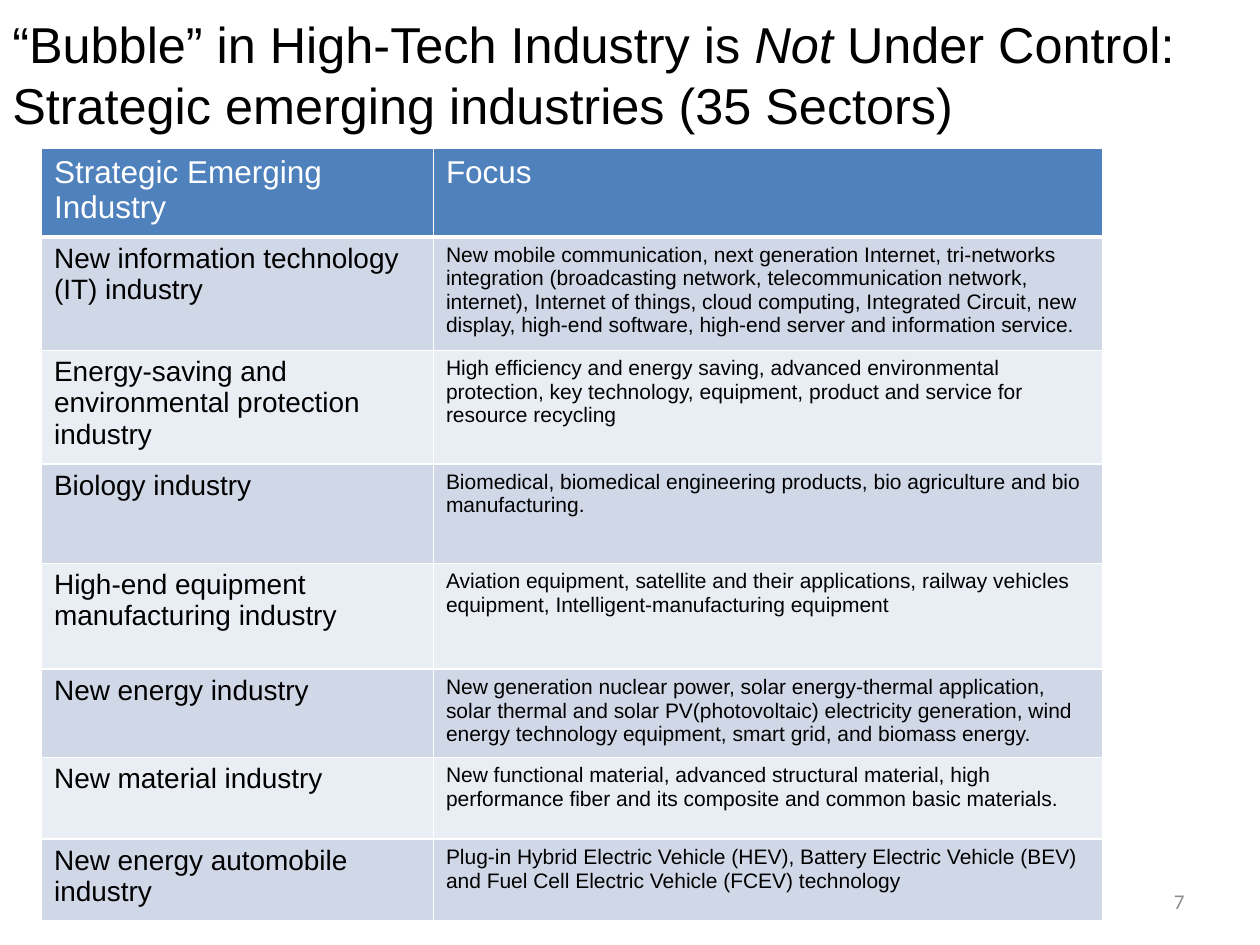
from lxml import etree
from pptx import Presentation
from pptx.dml.color import RGBColor
from pptx.enum import text
from pptx.oxml import ns
from pptx.util import Inches, Pt

HEADER = ("Strategic Emerging Industry", "Focus")
INDUSTRIES = [
    ("New information technology (IT) industry",
     "New mobile communication, next generation Internet, tri-networks integration "
     "(broadcasting network, telecommunication network, internet), Internet of things, "
     "cloud computing, Integrated Circuit, new display, high-end software, "
     "high-end server and information service."),
    ("Energy-saving and environmental protection industry",
     "High efficiency and energy saving, advanced environmental protection, "
     "key technology, equipment, product and service for resource recycling"),
    ("Biology industry",
     "Biomedical, biomedical engineering products, bio agriculture and bio manufacturing."),
    ("High-end equipment manufacturing industry",
     "Aviation equipment, satellite and their applications, railway vehicles equipment, "
     "Intelligent-manufacturing equipment"),
    ("New energy industry",
     "New generation nuclear power, solar energy-thermal application, solar thermal and "
     "solar PV(photovoltaic) electricity generation, wind energy technology equipment, "
     "smart grid, and biomass energy."),
    ("New material industry",
     "New functional material, advanced structural material, high performance fiber "
     "and its composite and common basic materials."),
    ("New energy automobile industry",
     "Plug-in Hybrid Electric Vehicle (HEV), Battery Electric Vehicle (BEV) "
     "and Fuel Cell Electric Vehicle (FCEV) technology"),
]
COL_WIDTHS = (3.11, 5.31)
ROW_HEIGHTS = (0.66, 0.84, 0.84, 0.79, 0.84, 0.66, 0.65, 0.65)
HEADER_FILL = "4F81BD"
BANDS = ("D0D8E8", "E9EDF4")


def rgb(value):
    return RGBColor.from_string(value)


def add_run(p, content, size, color="000000", name="Arial", italic=False):
    r = p.add_run()
    r.text = content
    fmt = {"size": Pt(size), "name": name, "italic": italic}
    for key, value in fmt.items():
        setattr(r.font, key, value)
    r.font.color.rgb = rgb(color)


def add_box(s, left, top, width, height, align):
    tf = s.shapes.add_textbox(*map(Inches, (left, top, width, height))).text_frame
    fmt = {"word_wrap": True, "vertical_anchor": text.MSO_ANCHOR.MIDDLE}
    for key, value in fmt.items():
        setattr(tf, key, value)
    p = tf.paragraphs[0]
    p.alignment = align
    return p


def set_borders(cell, **widths):
    tc_pr = cell._tc.get_or_add_tcPr()
    for side in "LRTB":
        ln = etree.SubElement(tc_pr, ns.qn(f"a:ln{side}"), w=str(Pt(widths.get(side, 1))))
        fill = etree.SubElement(ln, ns.qn("a:solidFill"))
        etree.SubElement(fill, ns.qn("a:srgbClr"), val="FFFFFF")


def fill_cell(cell, content, size, color, fill, **widths):
    set_borders(cell, **widths)
    cell.fill.solid()
    cell.fill.fore_color.rgb = rgb(fill)
    add_run(cell.text_frame.paragraphs[0], content, size, color)


def add_title(s):
    p = add_box(s, 0, 0, 10, 1.17, text.PP_ALIGN.LEFT)
    add_run(p, "“Bubble” in High-Tech Industry is ", 28.8)
    add_run(p, "Not ", 28.8, italic=True)
    add_run(p, "Under Control:", 28.8)
    p.add_line_break()
    add_run(p, "Strategic emerging industries (35 Sectors)", 28.8)


def add_industry_table(s):
    size = (sum(COL_WIDTHS), sum(ROW_HEIGHTS))
    table = s.shapes.add_table(len(ROW_HEIGHTS), len(COL_WIDTHS),
                               *map(Inches, (0.33, 1.18, *size))).table
    for column, width in zip(table.columns, COL_WIDTHS):
        column.width = Inches(width)
    for row, height in zip(table.rows, ROW_HEIGHTS):
        row.height = Inches(height)
    for cell, content in zip(table.rows[0].cells, HEADER):
        fill_cell(cell, content, 18, "FFFFFF", HEADER_FILL, B=3)
    for i, industry in enumerate(INDUSTRIES):
        for cell, content, pts in zip(table.rows[i + 1].cells, industry, (16, 12)):
            fill_cell(cell, content, pts, "000000", BANDS[i % 2])


def add_page_number(s):
    p = add_box(s, 7.17, 6.95, 2.33, 0.4, text.PP_ALIGN.RIGHT)
    add_run(p, "7", 12, "8C8C8C", "Calibri")


def main():
    prs = Presentation()
    prs.slide_width, prs.slide_height = Inches(10), Inches(7.5)
    s = prs.slides.add_slide(prs.slide_layouts[6])
    add_title(s)
    add_industry_table(s)
    add_page_number(s)
    prs.save("out.pptx")


if __name__ == "__main__":
    main()
